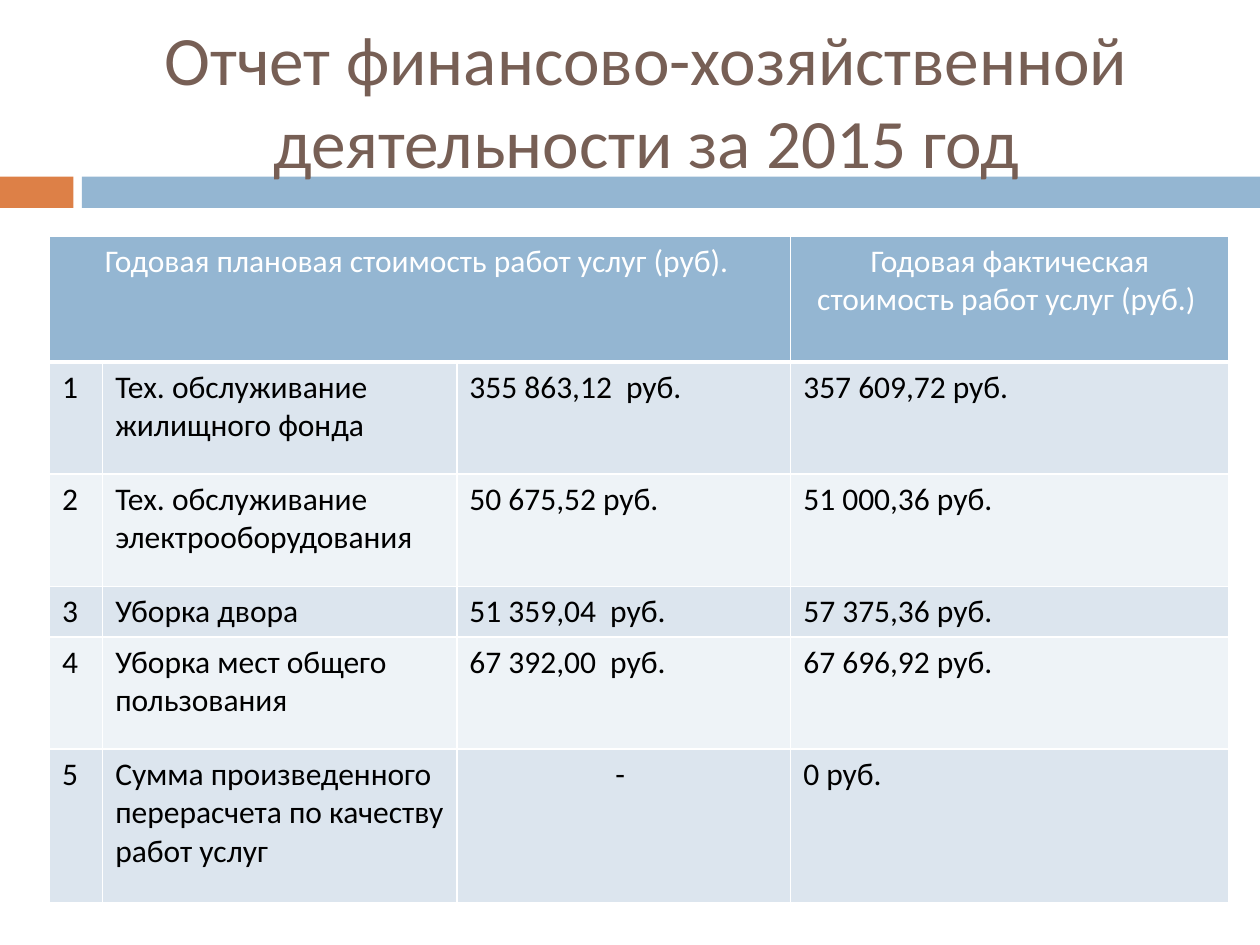
from lxml import etree
from pptx import Presentation
from pptx import util as u
from pptx.dml.color import RGBColor
from pptx.enum import shapes, text
from pptx.oxml.ns import qn

ORANGE = RGBColor(0xDD, 0x80, 0x47)
BLUE = RGBColor(0x94, 0xB6, 0xD2)
BROWN = RGBColor(0x77, 0x5F, 0x55)
WHITE = RGBColor(0xFF, 0xFF, 0xFF)
BLACK = RGBColor(0, 0, 0)
BANDS = (RGBColor(0xDC, 0xE5, 0xEE), RGBColor(0xEE, 0xF3, 0xF7))

TITLE = "Отчет финансово-хозяйственной деятельности за 2015 год"
PLAN_HEADING = "Годовая плановая стоимость работ услуг (руб). "
FACT_HEADING = "Годовая фактическая стоимость работ услуг (руб.) "
WORKS = [
    ("Тех. обслуживание жилищного фонда", "355 863,12  руб.", "357 609,72 руб."),
    ("Тех. обслуживание электрооборудования", "50 675,52 руб.", "51 000,36 руб."),
    ("Уборка двора", "51 359,04  руб.", "57 375,36 руб."),
    ("Уборка мест общего пользования", "67 392,00  руб.", "67 696,92 руб."),
    ("Сумма произведенного перерасчета по качеству работ услуг", "- ", "0 руб."),
]
COLUMN_WIDTHS = (1.07, 7.14, 6.73, 8.84)
ROW_HEIGHTS = (2.54, 2.26, 2.26, 1.02, 2.26, 3.1)


def write(frame, wording, size, color, align):
    paragraph = frame.paragraphs[0]
    paragraph.alignment = align
    run = paragraph.add_run()
    run.text = wording
    for name, value in {"name": "Calibri", "size": u.Pt(size)}.items():
        setattr(run.font, name, value)
    run.font.color.rgb = color


def add_divider(slide, left, top, width, height):
    """Orange tab and blue band, separated by a small gap."""
    tab, gap = 1.48, 0.17
    band_left = tab + gap
    for x, w, color in ((0, tab, ORANGE), (band_left, width - band_left, BLUE)):
        bar = slide.shapes.add_shape(shapes.MSO_SHAPE.RECTANGLE, u.Cm(left + x),
                                     u.Cm(top), u.Cm(w), u.Cm(height))
        bar.shadow.inherit = False
        bar.fill.solid()
        bar.fill.fore_color.rgb = color
        bar.line.fill.background()


def add_title(slide, left, top, width, height):
    heading = slide.shapes.add_textbox(*map(u.Cm, (left, top, width, height)))
    frame = heading.text_frame
    settings = {"word_wrap": True, "vertical_anchor": text.MSO_ANCHOR.MIDDLE}
    for name, value in settings.items():
        setattr(frame, name, value)
    write(frame, TITLE, 39.6, BROWN, text.PP_ALIGN.CENTER)


def format_cell(cell, fill, bottom_width):
    """White borders first, then the fill, as the schema orders them."""
    properties = cell._tc.get_or_add_tcPr()
    for side, width in {"L": 1, "R": 1, "T": 1, "B": bottom_width}.items():
        border = etree.SubElement(properties, qn(f"a:ln{side}"), w=str(u.Pt(width)))
        paint = etree.SubElement(border, qn("a:solidFill"))
        etree.SubElement(paint, qn("a:srgbClr"), val=str(WHITE))
    cell.fill.solid()
    cell.fill.fore_color.rgb = fill


def add_cost_table(slide, left, top):
    box = (left, top, sum(COLUMN_WIDTHS), sum(ROW_HEIGHTS))
    costs = slide.shapes.add_table(len(ROW_HEIGHTS), len(COLUMN_WIDTHS),
                                   *map(u.Cm, box)).table
    for column, width in zip(costs.columns, COLUMN_WIDTHS):
        column.width = u.Cm(width)
    for row, height in zip(costs.rows, ROW_HEIGHTS):
        row.height = u.Cm(height)

    # Header: the plan heading spans number, work and planned cost
    for cell in costs.rows[0].cells:
        format_cell(cell, BLUE, 3)
    costs.cell(0, 0).merge(costs.cell(0, 2))
    for column, heading in ((0, PLAN_HEADING), (3, FACT_HEADING)):
        write(costs.cell(0, column).text_frame, heading, 18, WHITE,
              text.PP_ALIGN.CENTER)

    # Numbered works in alternating bands; a dash is centred
    for number, work in enumerate(WORKS, 1):
        for column, wording in enumerate((str(number), *work)):
            cell = costs.cell(number, column)
            format_cell(cell, BANDS[(number - 1) % 2], 1)
            align = text.PP_ALIGN.CENTER if wording == "- " else text.PP_ALIGN.LEFT
            write(cell.text_frame, wording, 18, BLACK, align)


def main():
    deck = Presentation()
    deck.slide_width, deck.slide_height = u.Cm(25.4), u.Cm(19.05)
    slide = deck.slides.add_slide(deck.slide_layouts[6])
    add_divider(slide, 0, 3.56, 25.4, 0.63)
    add_title(slide, 1.7, 0.64, 22.66, 2.74)
    add_cost_table(slide, 1, 4.76)
    deck.save("out.pptx")


if __name__ == "__main__":
    main()
